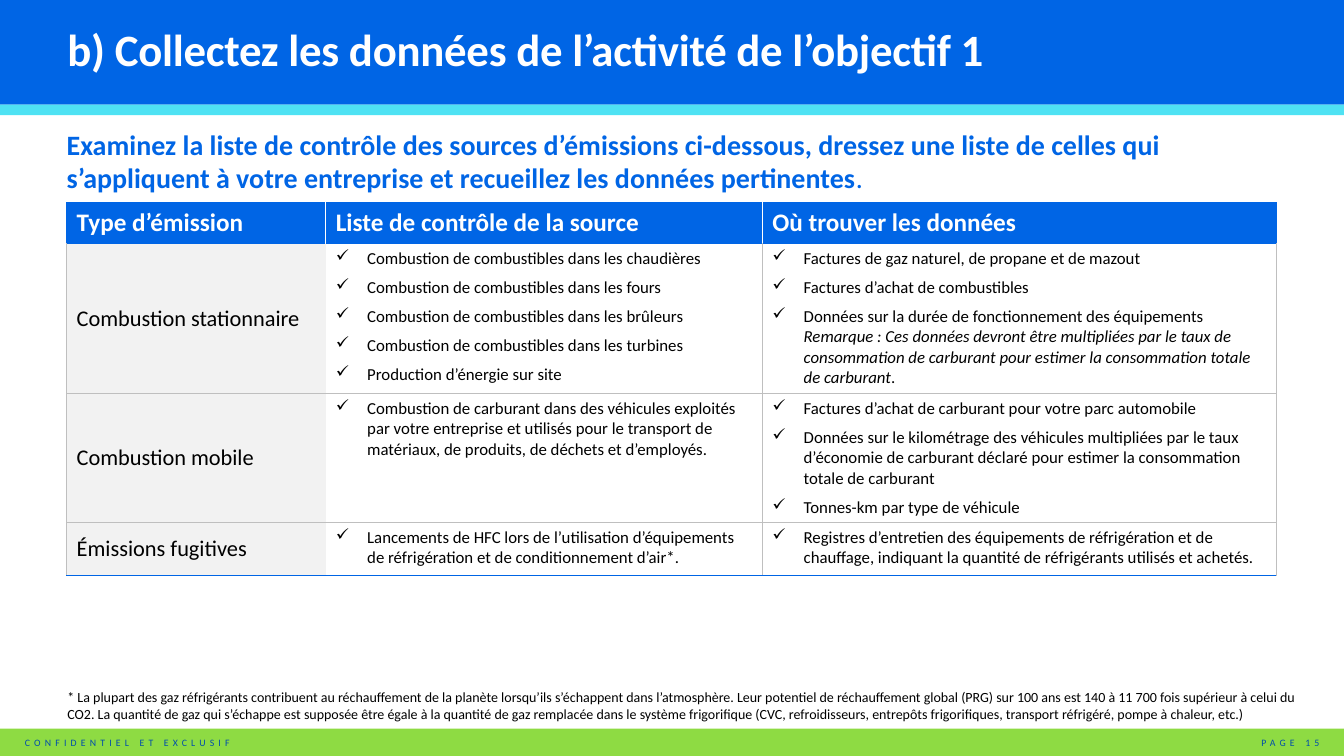
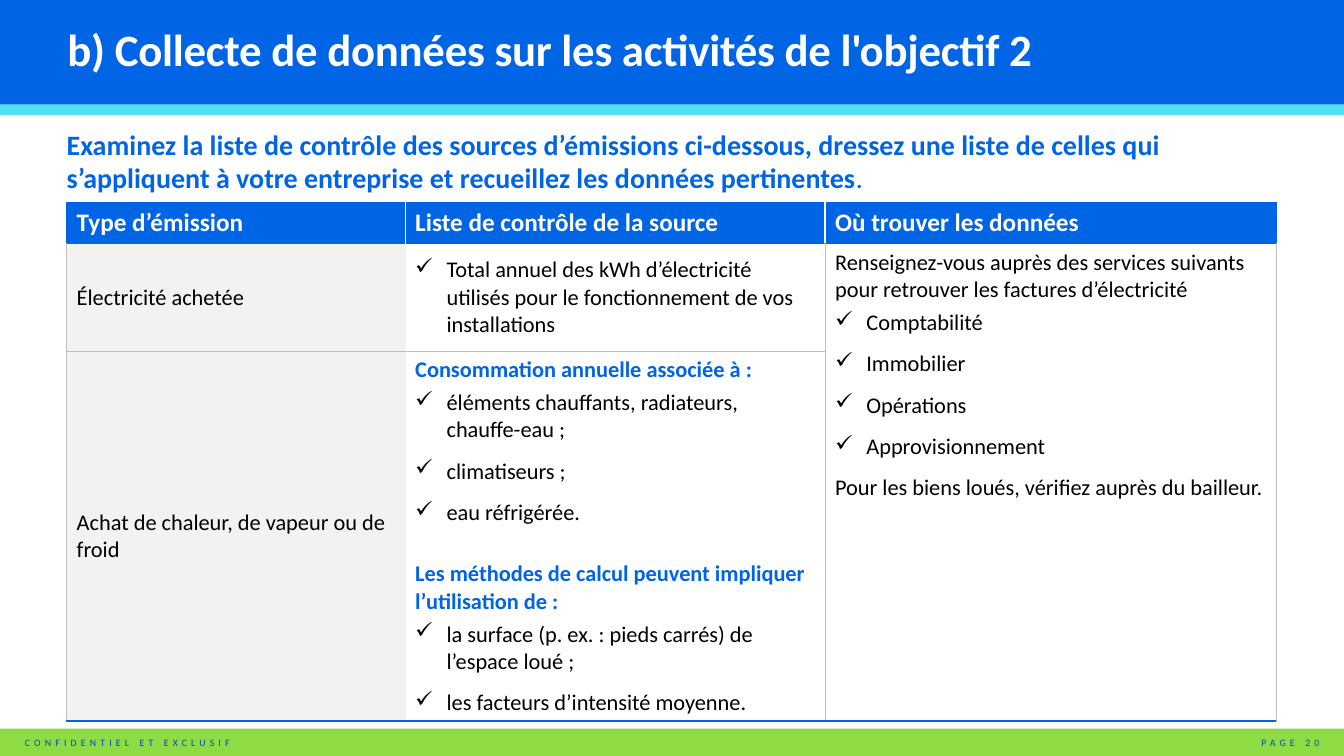
import lxml.etree
import pptx
import pptx.dml.color
import pptx.enum.shapes
import pptx.enum.text
import pptx.oxml.ns
import pptx.util

Cm = pptx.util.Cm
Pt = pptx.util.Pt
RGBColor = pptx.dml.color.RGBColor
ANCHOR = pptx.enum.text.MSO_ANCHOR
ALIGN = pptx.enum.text.PP_ALIGN
qn = pptx.oxml.ns.qn

BLUE = RGBColor(0x00, 0x65, 0xE5)
DARK_BLUE = RGBColor(0x00, 0x4C, 0xAC)
CYAN = RGBColor(0x4F, 0xE2, 0xF3)
GREEN = RGBColor(0x8E, 0xDB, 0x43)
LIGHT_GREY = RGBColor(0xF2, 0xF2, 0xF2)
GREY = RGBColor(0xBF, 0xBF, 0xBF)
WHITE = RGBColor(0xFF, 0xFF, 0xFF)
BLACK = RGBColor(0x00, 0x00, 0x00)

FONT = "Calibri"
NO_TABLE_STYLE = "{2D5ABB26-0587-4C30-8999-92F81FD0307C}"
CHECK = "✓ "
HEADING = "# "
MARGIN = Cm(1.68)
CONTENT_WIDTH = Cm(30.48)
CHECK_INDENT = Cm(0.79)

BANDS = [  # top, height, colour
    (Cm(0), Cm(2.64), BLUE),
    (Cm(2.64), Cm(0.26), CYAN),
    (Cm(18.36), Cm(0.69), GREEN),
]
SUBTITLE = (
    "Examinez la liste de contrôle des sources d’émissions ci-dessous, dressez une liste de "
    "celles qui s’appliquent à votre entreprise et recueillez les données pertinentes"
)
HEADERS = ["Type d’émission", "Liste de contrôle de la source", "Où trouver les données"]

# In a cell, each line is a paragraph and "|" switches italics on and off.
SLIDES = [
    {
        "title": "b) Collectez les données de l’activité de l’objectif 1",
        "page": 15,
        "columns": [6.53, 11, 12.95],
        "heights": [1.04, 3.77, 3.25, 1.34],
        "list_size": 12,
        "space_before": 0,
        "rows": [
            [
                ["Combustion stationnaire"],
                [
                    "✓ Combustion de combustibles dans les chaudières",
                    "✓ Combustion de combustibles dans les fours",
                    "✓ Combustion de combustibles dans les brûleurs",
                    "✓ Combustion de combustibles dans les turbines",
                    "✓ Production d’énergie sur site",
                ],
                [
                    "✓ Factures de gaz naturel, de propane et de mazout",
                    "✓ Factures d’achat de combustibles",
                    "✓ Données sur la durée de fonctionnement des équipements "
                    "|Remarque : Ces données devront être multipliées par le taux de consommation "
                    "de carburant pour estimer la consommation totale de carburant|.",
                ],
            ],
            [
                ["Combustion mobile"],
                [
                    "✓ Combustion de carburant dans des véhicules exploités par votre entreprise "
                    "et utilisés pour le transport de matériaux, de produits, de déchets et "
                    "d’employés.",
                ],
                [
                    "✓ Factures d’achat de carburant pour votre parc automobile",
                    "✓ Données sur le kilométrage des véhicules multipliées par le taux d’économie "
                    "de carburant déclaré pour estimer la consommation totale de carburant",
                    "✓ Tonnes-km par type de véhicule",
                ],
            ],
            [
                ["Émissions fugitives"],
                [
                    "✓ Lancements de HFC lors de l’utilisation d’équipements de réfrigération et "
                    "de conditionnement d’air*.",
                ],
                [
                    "✓ Registres d’entretien des équipements de réfrigération et de chauffage, "
                    "indiquant la quantité de réfrigérants utilisés et achetés.",
                ],
            ],
        ],
        "footnote": (
            "* La plupart des gaz réfrigérants contribuent au réchauffement de la planète "
            "lorsqu’ils s’échappent dans l’atmosphère. Leur potentiel de réchauffement global "
            "(PRG) sur 100 ans est 140 à 11 700 fois supérieur à celui du CO2. La quantité de gaz "
            "qui s’échappe est supposée être égale à la quantité de gaz remplacée dans le système "
            "frigorifique (CVC, refroidisseurs, entrepôts frigorifiques, transport réfrigéré, "
            "pompe à chaleur, etc.)"
        ),
    },
    {
        "title": "b) Collecte de données sur les activités de l'objectif 2",
        "page": 20,
        "columns": [8.53, 10.58, 11.37],
        "heights": [1.04, 2.71, 9.32],
        "list_size": 16,
        "space_before": 4,
        "middle_cell": (1, 1),
        "merge": ((1, 2), (2, 2)),
        "rows": [
            [
                ["Électricité achetée"],
                [
                    "✓ Total annuel des kWh d’électricité utilisés pour le fonctionnement de vos "
                    "installations",
                ],
                [
                    "Renseignez-vous auprès des services suivants pour retrouver les factures "
                    "d’électricité",
                    "✓ Comptabilité",
                    "✓ Immobilier",
                    "✓ Opérations",
                    "✓ Approvisionnement",
                    "Pour les biens loués, vérifiez auprès du bailleur.",
                ],
            ],
            [
                ["Achat de chaleur, de vapeur ou de froid"],
                [
                    "# Consommation annuelle associée à :",
                    "✓ éléments chauffants, radiateurs, chauffe-eau ;",
                    "✓ climatiseurs ;",
                    "✓ eau réfrigérée.",
                    "# Les méthodes de calcul peuvent impliquer l’utilisation de :",
                    "✓ la surface (p. ex. : pieds carrés) de l’espace loué ;",
                    "✓ les facteurs d’intensité moyenne.",
                ],
                [],
            ],
        ],
    },
]


def add_text(slide, box, text, size, color, bold=False, anchor=ANCHOR.MIDDLE,
             inset=(0, 0), spacing=None):
    """Add a one-paragraph text box and return its paragraph; spacing is in points."""
    frame = slide.shapes.add_textbox(*box).text_frame
    frame.word_wrap = True
    frame.vertical_anchor = anchor
    frame.margin_left = frame.margin_right = inset[0]
    frame.margin_top = frame.margin_bottom = inset[1]
    paragraph = frame.paragraphs[0]
    paragraph.add_run().text = text
    font = paragraph.font
    font.name, font.size, font.bold = FONT, Pt(size), bold
    font.color.rgb = color
    if spacing is not None:
        default_run = paragraph._p.pPr.find(qn("a:defRPr"))
        default_run.set("spc", str(int(spacing * 100)))
    return paragraph


def set_borders(cell, *borders):
    """Draw the left, right, top and bottom borders, each a (colour, points) pair."""
    properties = cell._tc.get_or_add_tcPr()
    for side, (color, width) in zip("LRTB", borders):
        line = lxml.etree.SubElement(properties, qn("a:ln" + side), w=str(Pt(width)))
        fill = lxml.etree.SubElement(line, qn("a:solidFill"))
        lxml.etree.SubElement(fill, qn("a:srgbClr"), val=str(color))


presentation = pptx.Presentation()
presentation.slide_width = Cm(33.87)
presentation.slide_height = Cm(19.05)

for content in SLIDES:
    slide = presentation.slides.add_slide(presentation.slide_layouts[6])

    for top, height, color in BANDS:
        band = slide.shapes.add_shape(
            pptx.enum.shapes.MSO_SHAPE.RECTANGLE, 0, top, presentation.slide_width, height)
        band.shadow.inherit = False
        band.fill.solid()
        band.fill.fore_color.rgb = color
        band.line.fill.background()

    footer_style = {"size": 7, "color": DARK_BLUE, "anchor": ANCHOR.TOP,
                    "inset": (Cm(0.25), Cm(0.13)), "spacing": 3}
    add_text(slide, (Cm(0.38), Cm(18.44), Cm(15.93), Cm(0.56)),
             "CONFIDENTIEL ET EXCLUSIF", **footer_style)
    page = add_text(slide, (Cm(30.73), Cm(18.44), Cm(2.77), Cm(0.56)),
                    f"PAGE {content['page']}", **footer_style)
    page.alignment = ALIGN.RIGHT

    title = add_text(slide, (Cm(1.7), Cm(0.46), Cm(30.43), Cm(1.73)),
                     content["title"], 32, WHITE, bold=True, spacing=-0.2)
    title.line_spacing = 0.85

    subtitle = add_text(slide, (MARGIN, Cm(3.23), CONTENT_WIDTH, Cm(1.65)),
                        SUBTITLE, 20, BLUE, bold=True)
    full_stop = subtitle.add_run()
    full_stop.text = "."
    full_stop.font.bold = False

    heights = content["heights"]
    table = slide.shapes.add_table(
        len(heights), len(HEADERS), MARGIN, Cm(5.1), CONTENT_WIDTH, Cm(sum(heights))).table
    table._tbl.tblPr.find(qn("a:tableStyleId")).text = NO_TABLE_STYLE
    table.first_row = table.horz_banding = False
    for column, width in zip(table.columns, content["columns"]):
        column.width = Cm(width)
    for row, height in zip(table.rows, heights):
        row.height = Cm(height)
    if "merge" in content:
        first, last = content["merge"]
        table.cell(*first).merge(table.cell(*last))

    rows = [[[header] for header in HEADERS]] + content["rows"]
    for row_index, row in enumerate(rows):
        for column_index, lines in enumerate(row):
            cell = table.cell(row_index, column_index)
            is_header = row_index == 0
            is_label = column_index == 0
            is_last_row = row_index + cell.span_height >= len(rows)

            if is_header:
                edge, divider = (BLUE, 0.5), (WHITE, 1)
                left = edge if is_label else divider
                right = edge if column_index == len(HEADERS) - 1 else divider
                set_borders(cell, left, right, edge, edge)
            else:
                grey, hidden = (GREY, 0.5), (LIGHT_GREY, 0.5)
                set_borders(
                    cell,
                    hidden if column_index == 1 else grey,
                    hidden if is_label else grey,
                    (BLUE, 0.5) if row_index == 1 else grey,
                    (BLUE, 1) if is_last_row else grey)
            cell.fill.solid()
            cell.fill.fore_color.rgb = BLUE if is_header else LIGHT_GREY if is_label else WHITE
            is_middle = is_header or is_label or (row_index, column_index) == content.get("middle_cell")
            cell.vertical_anchor = ANCHOR.MIDDLE if is_middle else ANCHOR.TOP

            for line_index, line in enumerate(lines):
                frame = cell.text_frame
                paragraph = frame.add_paragraph() if line_index else frame.paragraphs[0]
                is_check = line.startswith(CHECK)
                is_heading = line.startswith(HEADING)
                if is_check:
                    properties = paragraph._p.get_or_add_pPr()
                    properties.set("marL", str(CHECK_INDENT))
                    properties.set("indent", str(-CHECK_INDENT))
                    lxml.etree.SubElement(properties, qn("a:buChar"), char=CHECK.strip())
                    paragraph.space_after = Pt(6)
                if line_index:
                    paragraph.space_before = Pt(18 if is_heading else content["space_before"])

                text = line.removeprefix(CHECK).removeprefix(HEADING)
                for part_index, part in enumerate(text.split("|")):
                    run = paragraph.add_run()
                    run.text = part
                    if part_index % 2:
                        run.font.italic = True
                font = paragraph.font
                font.name = FONT
                font.size = Pt(18 if is_header else 16 if is_label else content["list_size"])
                font.bold = is_header or is_heading
                font.color.rgb = WHITE if is_header else BLUE if is_heading else BLACK

    if "footnote" in content:
        add_text(slide, (Cm(1.7), Cm(17.35), Cm(31.09), Cm(0.86)),
                 content["footnote"], 10, BLACK, anchor=ANCHOR.BOTTOM)

presentation.save("out.pptx")
